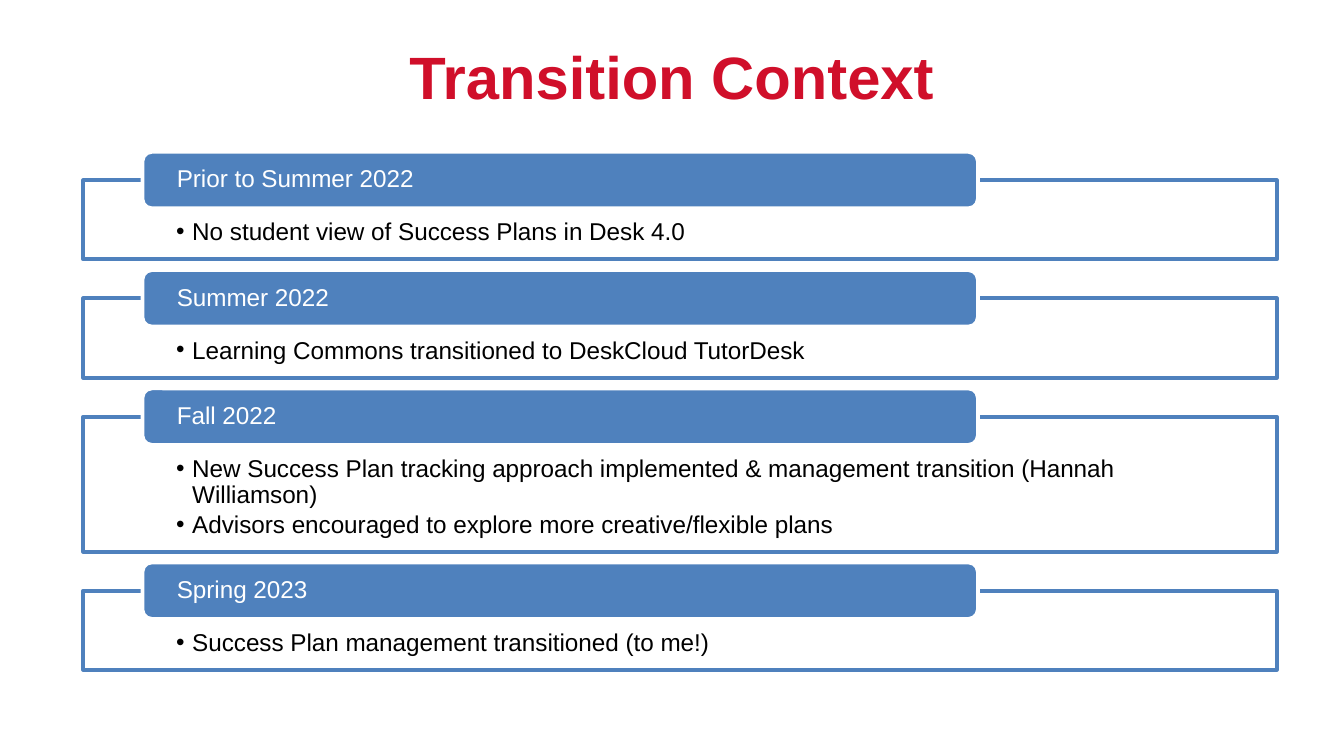
import dataclasses

import lxml.etree
import pptx
import pptx.dml.color
import pptx.enum.shapes
import pptx.enum.text
import pptx.oxml.ns
import pptx.util

SLIDE_WIDTH = pptx.util.Inches(10)
SLIDE_HEIGHT = SLIDE_WIDTH * 9 // 16
CELL = SLIDE_WIDTH // 100  # square grid cell, 100 columns across the slide

COLORS = {"title": "D00F2A", "accent": "4F81BD", "paper": "FFFFFF", "body": "000000"}
TITLE_FONT = {"name": "Arial", "size": pptx.util.Pt(32), "bold": True}
TEXT_FONT = {"name": "Arial", "size": pptx.util.Pt(13)}

TAB_ROWS = 4.2
TAB_INDENT = 4.4
TAB_SHARE = 0.7
SECTION_GAP = 0.8

# heading, bullets, rows taken by the section including its tab
PERIODS = [
    ("Prior to Summer 2022", ["No student view of Success Plans in Desk 4.0"], 8),
    ("Summer 2022", ["Learning Commons transitioned to DeskCloud TutorDesk"], 8),
    ("Fall 2022", [
        "New Success Plan tracking approach implemented & management transition "
        "(Hannah Williamson)",
        "Advisors encouraged to explore more creative/flexible plans",
    ], 12.15),
    ("Spring 2023", ["Success Plan management transitioned (to me!)"], 8),
]


@dataclasses.dataclass
class Box:
    """A rectangle measured in grid cells."""
    left: float
    top: float
    width: float
    height: float

    def emu(self):
        return [round(cells * CELL) for cells in dataclasses.astuple(self)]


def set_all(target, values):
    for name, value in values.items():
        setattr(target, name, value)


def rgb(role):
    return pptx.dml.color.RGBColor.from_string(COLORS[role])


def add_element(parent, tag, **attributes):
    return lxml.etree.SubElement(parent, pptx.oxml.ns.qn(tag), attributes)


def add_text(paragraph, text, font, role):
    run = paragraph.add_run()
    run.text = text
    set_all(run.font, font)
    run.font.color.rgb = rgb(role)


def add_panel(slide, kind, box, fill, line, margins, anchor):
    """Add a filled, outlined shape; margins are left/right, top, bottom in cells."""
    panel = slide.shapes.add_shape(kind, *box.emu())
    panel.shadow.inherit = False
    panel.fill.solid()
    panel.fill.fore_color.rgb = rgb(fill)
    panel.line.color.rgb = rgb(line)
    panel.line.width = pptx.util.Pt(2)
    side, top, bottom = [round(cells * CELL) for cells in margins]
    set_all(panel.text_frame, {
        "margin_left": side, "margin_right": side,
        "margin_top": top, "margin_bottom": bottom,
        "word_wrap": True, "vertical_anchor": anchor,
    })
    return panel


def set_opacity(panel, percent):
    color = panel._element.spPr.find(pptx.oxml.ns.qn("a:solidFill"))[0]
    add_element(color, "a:alpha", val=str(percent * 1000))


def format_paragraph(paragraph, space_after):
    set_all(paragraph, {
        "alignment": pptx.enum.text.PP_ALIGN.LEFT,
        "line_spacing": 0.9,
        "space_after": pptx.util.Pt(space_after),
    })


def add_bullet(paragraph):
    properties = paragraph._p.get_or_add_pPr()
    hanging = round(1.2 * CELL)
    properties.set("marL", str(hanging))
    properties.set("indent", str(-hanging))
    add_element(properties, "a:buFont", typeface="Arial")
    add_element(properties, "a:buChar", char="•")
    set_all(paragraph.font, TEXT_FONT)


def add_title(slide, box, text):
    title = slide.shapes.title
    set_all(title, dict(zip(("left", "top", "width", "height"), box.emu())))
    set_all(title.text_frame, {
        "vertical_anchor": pptx.enum.text.MSO_ANCHOR.MIDDLE, "word_wrap": True,
        "margin_top": 0, "margin_bottom": 0,
    })
    paragraph = title.text_frame.paragraphs[0]
    paragraph.alignment = pptx.enum.text.PP_ALIGN.CENTER
    add_text(paragraph, text, TITLE_FONT, "title")


def add_period(slide, box, heading, bullets):
    """Draw a framed bullet list with a heading tab straddling its top edge."""
    shapes = pptx.enum.shapes.MSO_SHAPE
    anchors = pptx.enum.text.MSO_ANCHOR
    overlap = TAB_ROWS / 2

    frame_box = Box(box.left, box.top + overlap, box.width, box.height - overlap)
    frame = add_panel(slide, shapes.RECTANGLE, frame_box, "paper", "accent",
                      (6.9, 2.95, 1), anchors.TOP)
    set_opacity(frame, 90)
    for index, bullet in enumerate(bullets):
        body = frame.text_frame
        paragraph = body.add_paragraph() if index else body.paragraphs[0]
        format_paragraph(paragraph, 2)
        add_bullet(paragraph)
        add_text(paragraph, bullet, TEXT_FONT, "body")

    tab_box = Box(box.left + TAB_INDENT, box.top, box.width * TAB_SHARE, TAB_ROWS)
    tab = add_panel(slide, shapes.ROUNDED_RECTANGLE, tab_box, "accent", "paper",
                    (2.35, 0, 0), anchors.MIDDLE)
    label = tab.text_frame.paragraphs[0]
    format_paragraph(label, 0)
    add_text(label, heading, TEXT_FONT, "paper")


def add_timeline(slide, left, top, width):
    for heading, bullets, rows in PERIODS:
        add_period(slide, Box(left, top, width, rows), heading, bullets)
        top += rows + SECTION_GAP


def main():
    deck = pptx.Presentation()
    set_all(deck, {"slide_width": SLIDE_WIDTH, "slide_height": SLIDE_HEIGHT})
    slide = deck.slides.add_slide(deck.slide_layouts.get_by_name("Title Only"))
    add_title(slide, Box(5, 3.4, 90, 4.5), "Transition Context")
    add_timeline(slide, left=6.2, top=11.3, width=88.8)
    deck.save("out.pptx")


if __name__ == "__main__":
    main()
